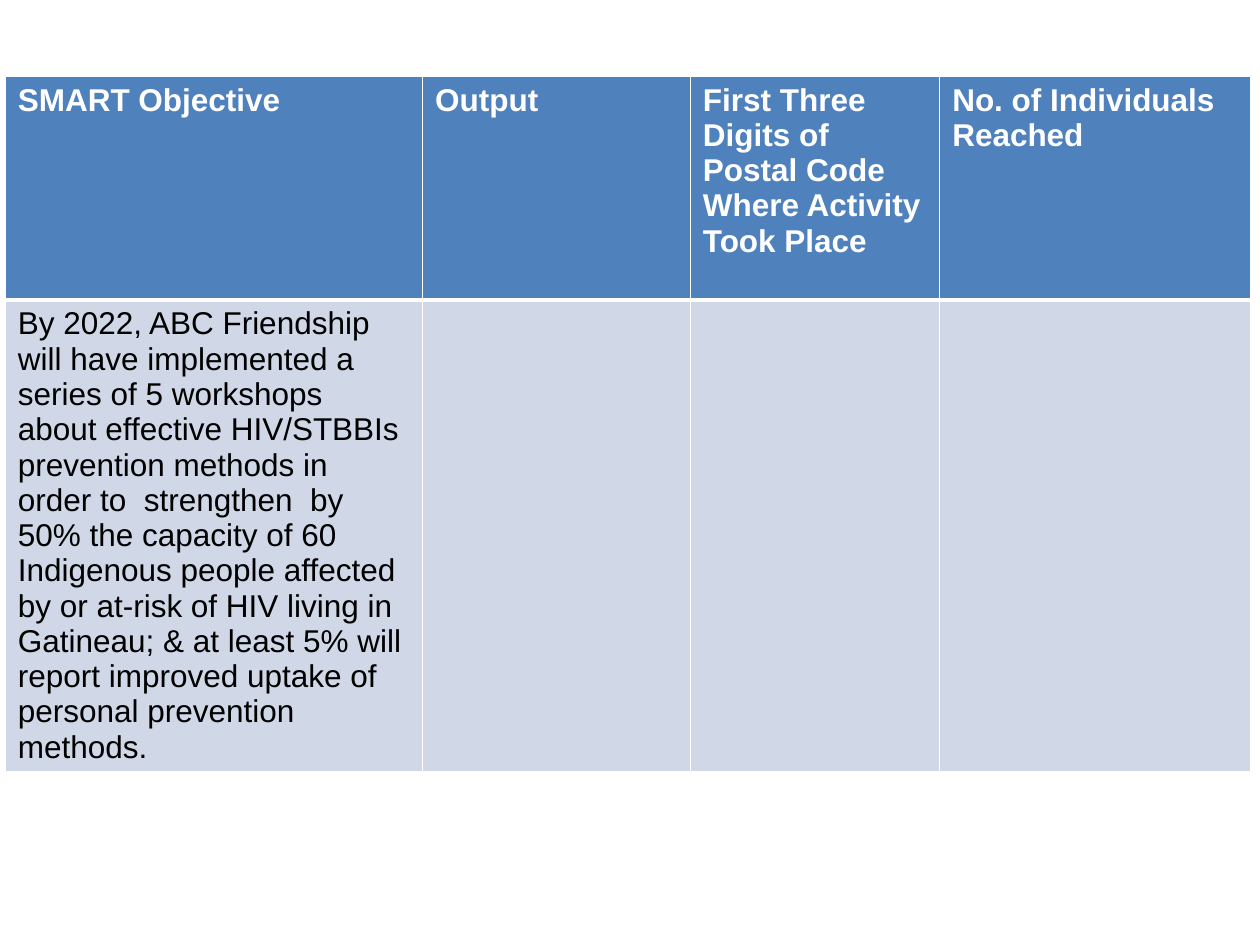
import pptx
import pptx.dml.color
import pptx.oxml
import pptx.oxml.ns
import pptx.util

Pt = pptx.util.Pt

COLORS = {
    "header": "4F81BD",
    "body": "D0D8E8",
    "border": "FFFFFF",
    "header_text": "FFFFFF",
    "body_text": "000000",
}
COLUMN_WIDTHS = [238.5, 153, 142.5, 178]
ROW_HEIGHTS = [128, 269]
THIN, THICK = 1, 3

HEADINGS = [
    "SMART Objective",
    "Output",
    "First Three Digits of Postal Code Where Activity Took Place",
    "No. of Individuals Reached",
]
OBJECTIVE = (
    "By 2022, ABC Friendship will have implemented a series of 5 workshops "
    "about effective HIV/STBBIs prevention methods in order to  strengthen  by "
    "50% the capacity of 60 Indigenous people affected by or at-risk of HIV "
    "living in Gatineau; & at least 5% will report improved uptake of personal "
    "prevention methods."
)


def rgb(name):
    return pptx.dml.color.RGBColor.from_string(COLORS[name])


def write_text(text_frame, text, font="Arial", size=18, color="body_text", bold=False):
    run = text_frame.paragraphs[0].add_run()
    run.text = text
    run.font.name = font
    run.font.size = Pt(size)
    run.font.bold = bold
    run.font.color.rgb = rgb(color)


def set_borders(cell, top, bottom):
    """Draw all four cell edges; the side edges are thin. Call before filling."""
    properties = cell._tc.get_or_add_tcPr()
    widths = {"lnL": THIN, "lnR": THIN, "lnT": top, "lnB": bottom}
    for tag, width in widths.items():
        properties.append(pptx.oxml.parse_xml(
            f'<a:{tag} {pptx.oxml.ns.nsdecls("a")} w="{Pt(width)}"><a:solidFill>'
            f'<a:srgbClr val="{COLORS["border"]}"/></a:solidFill></a:{tag}>'
        ))


class SlideBuilder:
    def __init__(self, slide):
        self.slide = slide

    def add_table(self, left, top, rows):
        """Add a table whose first row is the header."""
        shape = self.slide.shapes.add_table(
            len(rows), len(COLUMN_WIDTHS), Pt(left), Pt(top),
            Pt(sum(COLUMN_WIDTHS)), Pt(sum(ROW_HEIGHTS)),
        )
        table = shape.table
        table.horz_banding = False
        for column, width in zip(table.columns, COLUMN_WIDTHS):
            column.width = Pt(width)
        for row, height in zip(table.rows, ROW_HEIGHTS):
            row.height = Pt(height)
        for row_index, texts in enumerate(rows):
            for column_index, text in enumerate(texts):
                cell = table.cell(row_index, column_index)
                self.style_cell(cell, text, is_header=row_index == 0)

    def style_cell(self, cell, text, is_header):
        part = "header" if is_header else "body"
        set_borders(
            cell,
            top=THIN if is_header else THICK,
            bottom=THICK if is_header else THIN,
        )
        cell.fill.solid()
        cell.fill.fore_color.rgb = rgb(part)
        if text:
            write_text(cell.text_frame, text, color=f"{part}_text", bold=is_header)
        else:
            cell.text_frame.paragraphs[0].font.size = Pt(18)


def main():
    presentation = pptx.Presentation()
    presentation.slide_width = Pt(720)
    presentation.slide_height = Pt(540)
    slide = presentation.slides.add_slide(presentation.slide_layouts[6])
    builder = SlideBuilder(slide)
    builder.add_table(3, 43.5, [HEADINGS, [OBJECTIVE, "", "", ""]])
    presentation.save("out.pptx")


if __name__ == "__main__":
    main()
